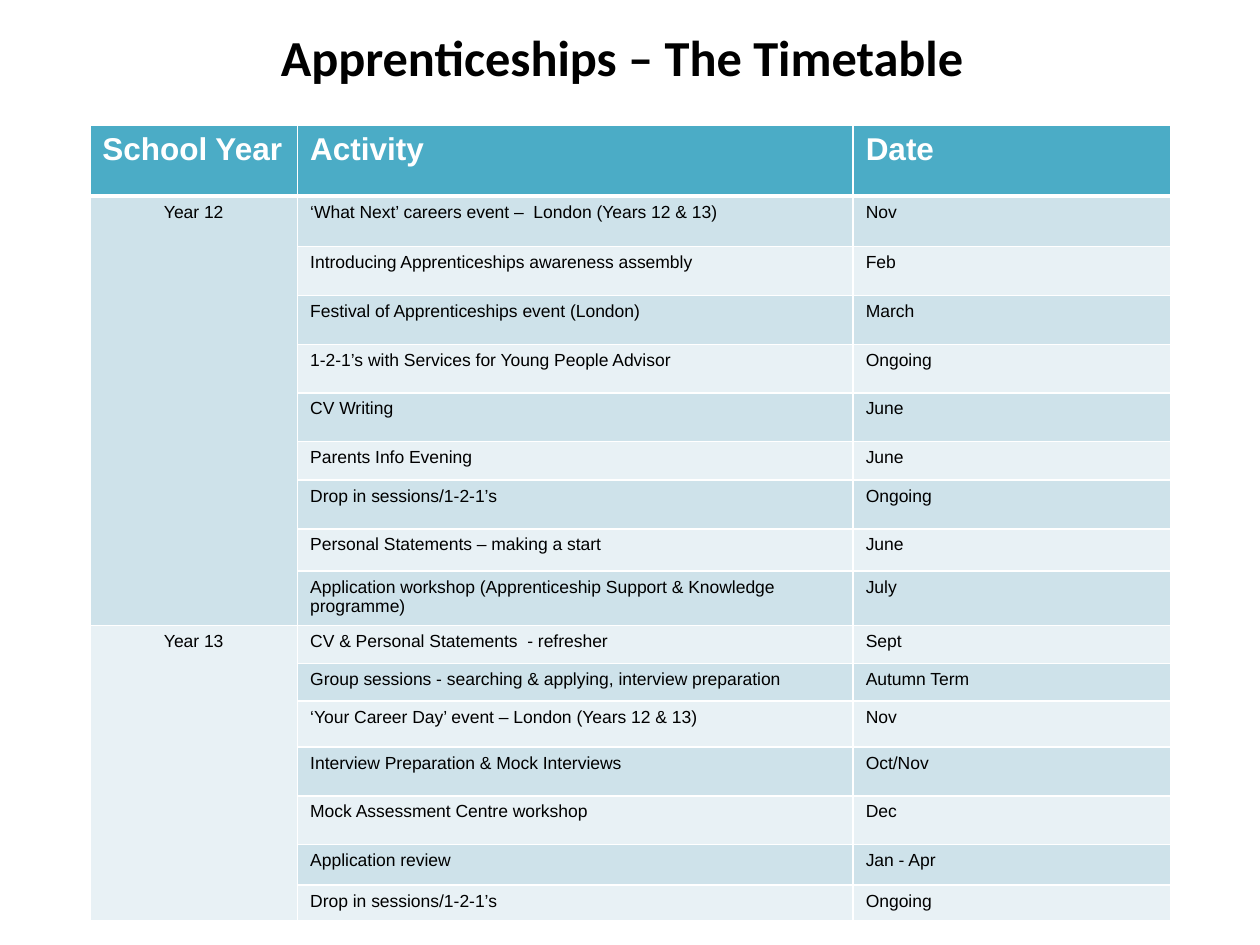
from lxml.etree import SubElement
from pptx import Presentation
from pptx.dml.color import RGBColor
from pptx.enum.text import MSO_ANCHOR, PP_ALIGN
from pptx.oxml.ns import qn
from pptx.util import Cm, Pt

TITLE = "Apprenticeships – The Timetable"
HEADS = ("School Year", "Activity", "Date")
# Each year: activity, date, row height in cm
YEARS = {
    "Year 12": [
        ("‘What Next’ careers event –  London (Years 12 & 13)", "Nov", 1.02),
        ("Introducing Apprenticeships awareness assembly", "Feb", 0.99),
        ("Festival of Apprenticeships event (London)", "March", 0.98),
        ("1-2-1’s with Services for Young People Advisor", "Ongoing", 0.98),
        ("CV Writing", "June", 0.98),
        ("Parents Info Evening", "June", 0.78),
        ("Drop in sessions/1-2-1’s", "Ongoing", 0.98),
        ("Personal Statements – making a start", "June", 0.85),
        ("Application workshop (Apprenticeship Support & Knowledge programme)",
         "July", 1.04),
    ],
    "Year 13": [
        ("CV & Personal Statements  - refresher", "Sept", 0.76),
        ("Group sessions - searching & applying, interview preparation",
         "Autumn Term", 0.76),
        ("‘Your Career Day’ event – London (Years 12 & 13)", "Nov", 0.93),
        ("Interview Preparation & Mock Interviews", "Oct/Nov", 0.98),
        ("Mock Assessment Centre workshop", "Dec", 0.98),
        ("Application review", "Jan - Apr", 0.82),
        ("Drop in sessions/1-2-1’s", "Ongoing", 0.72),
    ],
}
WIDTHS = (4.19, 11.2, 6.4)
HEAD_H = 1.42

BLACK = RGBColor(0x00, 0x00, 0x00)
WHITE = RGBColor(0xFF, 0xFF, 0xFF)
TEAL = RGBColor(0x4B, 0xAC, 0xC6)
BANDS = (RGBColor(0xE8, 0xF1, 0xF5), RGBColor(0xCE, 0xE2, 0xEA))


def style(para, font, size, color, bold, align):
    para.alignment = align
    para.font.name = font
    para.font.size = Pt(size)
    para.font.color.rgb = color
    para.font.bold = bold


def border(cell, top, bottom):
    props = cell._tc.get_or_add_tcPr()
    for side, width in (("L", 1), ("R", 1), ("T", top), ("B", bottom)):
        line = SubElement(props, qn("a:ln" + side), w=str(Pt(width)))
        fill = SubElement(line, qn("a:solidFill"))
        SubElement(fill, qn("a:srgbClr"), val=str(WHITE))


def fill_cell(row, col, text):
    cell = table.cell(row, col)
    head = row == 0
    cell.text = text
    align = PP_ALIGN.LEFT if head or col else PP_ALIGN.CENTER
    style(cell.text_frame.paragraphs[0], "Arial", 18 if head else 10,
          WHITE if head else BLACK, head, align)
    # Borders must come before the fill in the cell properties
    border(cell, 3 if row == 1 else 1, 3 if head else 1)
    cell.fill.solid()
    cell.fill.fore_color.rgb = TEAL if head else BANDS[row % 2]


deck = Presentation()
deck.slide_width, deck.slide_height = Cm(25.4), Cm(19.05)
slide = deck.slides.add_slide(deck.slide_layouts[6])

# Title
box = slide.shapes.add_textbox(Cm(1.75), Cm(0.56), Cm(21.59), Cm(1.14))
frame = box.text_frame
frame.word_wrap = True
frame.vertical_anchor = MSO_ANCHOR.MIDDLE
frame.text = TITLE
style(frame.paragraphs[0], "Calibri", 28.8, BLACK, True, PP_ALIGN.CENTER)

# Table grid
items = [item for group in YEARS.values() for item in group]
heights = [HEAD_H] + [item[2] for item in items]
table = slide.shapes.add_table(
    len(heights), len(WIDTHS), Cm(1.81), Cm(2.53),
    Cm(sum(WIDTHS)), Cm(sum(heights))).table
for col, width in zip(table.columns, WIDTHS):
    col.width = Cm(width)
for row, height in zip(table.rows, heights):
    row.height = Cm(height)

# Header and body cells
for col, head in enumerate(HEADS):
    fill_cell(0, col, head)
row = 1
for year, group in YEARS.items():
    first = row
    for activity, date, _ in group:
        texts = (year if row == first else "", activity, date)
        for col, text in enumerate(texts):
            fill_cell(row, col, text)
        row += 1
    table.cell(first, 0).merge(table.cell(row - 1, 0))

deck.save("out.pptx")
